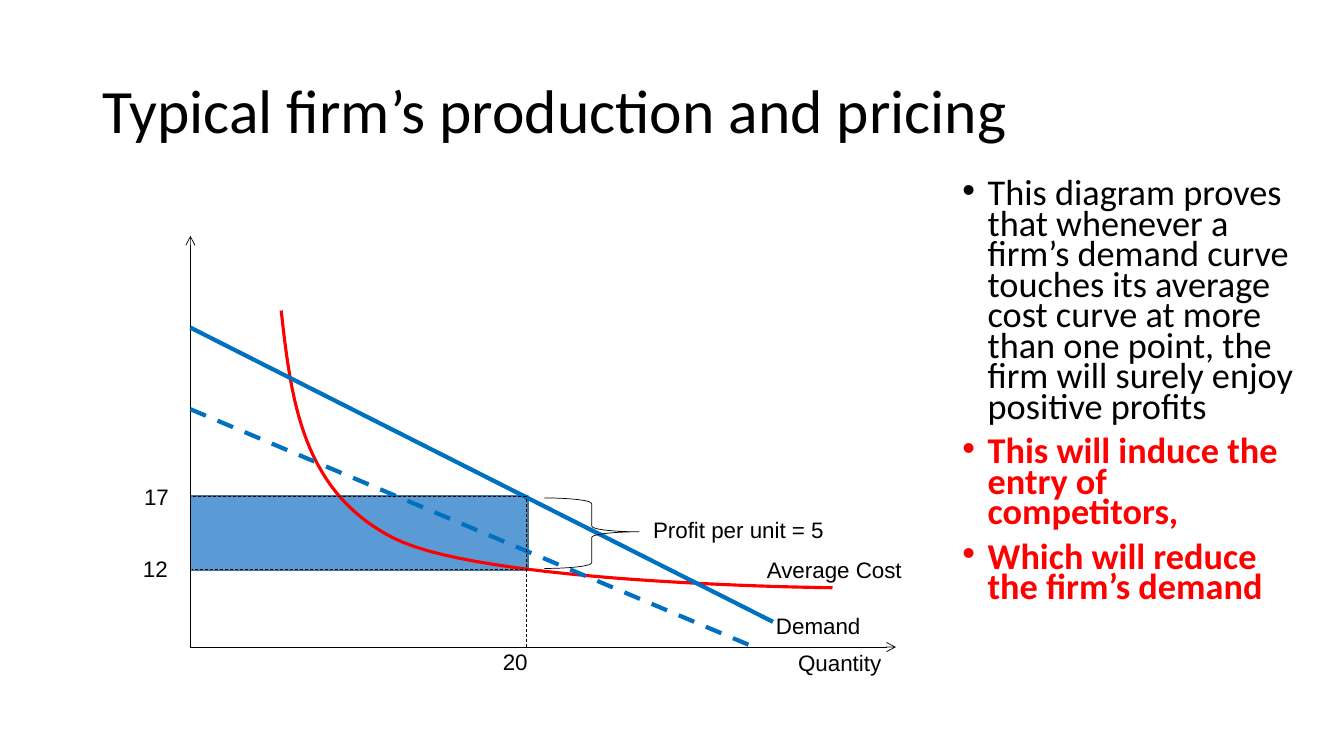
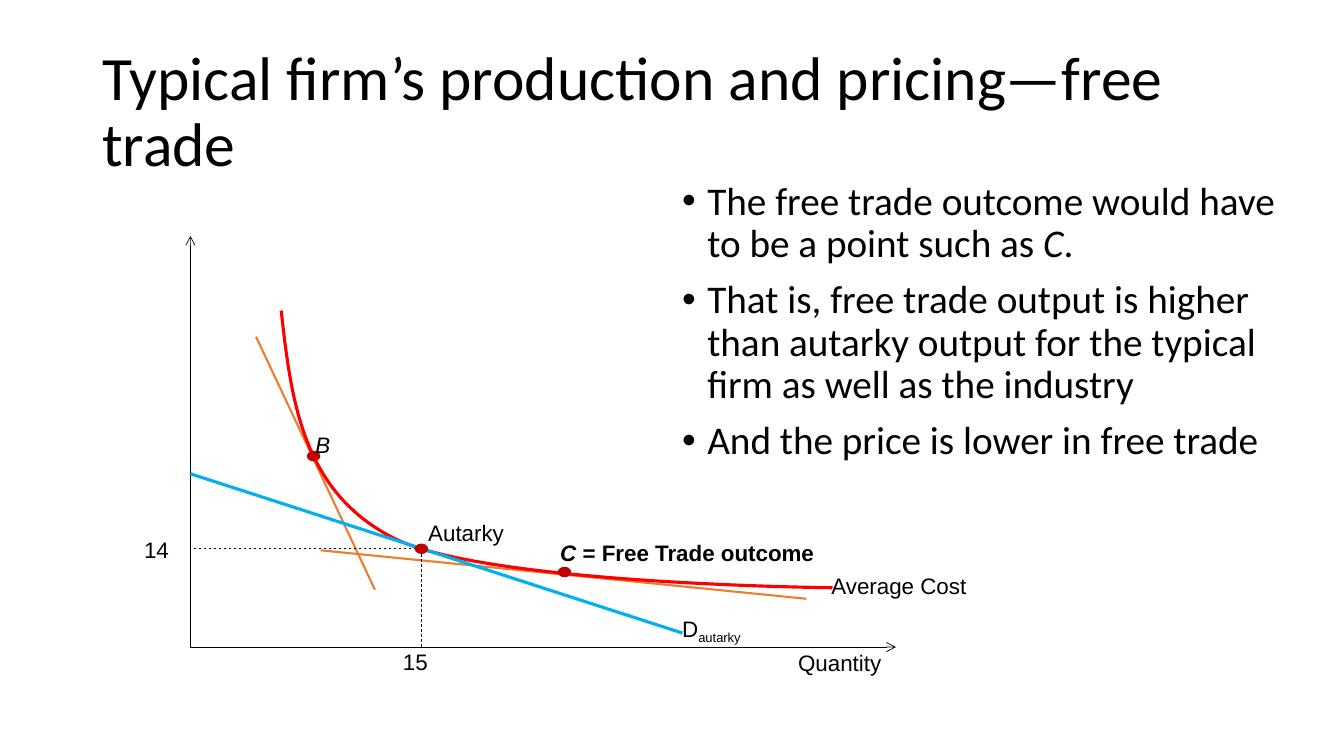
from lxml.etree import SubElement
from pptx import Presentation
from pptx.dml.color import RGBColor
from pptx.enum.dml import MSO_LINE
from pptx.enum.shapes import MSO_CONNECTOR, MSO_SHAPE
from pptx.enum.text import MSO_ANCHOR
from pptx.oxml.ns import qn
from pptx.util import Pt

BLACK, RED, BLUE, SKY = "000000", "FF0000", "0070C0", "00B0F0"
ORANGE, DOT_RED, PROFIT_FILL, PROFIT_EDGE = "ED7D31", "C00000", "5B9BD5", "43739E"
TITLE_FONT, LABEL_FONT = "Calibri", "Arial"
BOLD, ITALIC, SUBSCRIPT = "bold", "italic", "subscript"

ORIGIN_X, ORIGIN_Y = 136, 462.2
PRICE_TOP, QUANTITY_END = 168.5, 640
COST_START = (200.9, 221.8)
COST_BEZIERS = [
    ((208.1, 286.6), (216, 351.4), (281.5, 384.5)),
    ((347, 417.6), (594.7, 419.8), (594.7, 419.8)),
]
CURVE_STEPS = 30
DOT_WIDTH, DOT_HEIGHT = 8.6, 6.5
QUANTITY_LABEL = ([("Quantity",)], 563, 460.1, 112)

PROFIT_SLIDE = {
    "title": "Typical firm’s production and pricing",
    "body": {
        "box": (680.4, 126, 250.6, 356.4), "size": 25.9, "spacing": 0.7,
        "points": [
            (BLACK, [("This diagram proves that whenever a firm’s demand curve touches its "
                      "average cost curve at more than one point, the firm will surely "
                      "enjoy positive profits",)]),
            (RED, [("This will induce the entry of competitors,", BOLD)]),
            (RED, [("Which will reduce the firm’s demand", BOLD)]),
        ],
    },
    "profit": (136, 354.2, 241.2, 53.3),
    "brace": (388.8, 355.7, 67.7, 50.4),
    "tangents": [],
    "demands": [
        ((136, 234), (552.2, 444.2), BLUE, 3, False),
        ((136, 292.3), (542.2, 463.7), BLUE, 3, True),
    ],
    "guides": [
        ((375.8, ORIGIN_Y), (375.8, 354.2)),
        ((375.8, 354.2), (136, 354.2)),
        ((377.3, 406.8), (137.5, 406.8)),
    ],
    "dots": [],
    "labels": [
        ([("Demand",)], 547.2, 433.4, 112),
        ([("Average Cost",)], 540.7, 393.8, 160),
        QUANTITY_LABEL,
        ([("20",)], 352.1, 459.4, 50),
        ([("17",)], 95.8, 341.3, 50),
        ([("12",)], 95, 393.1, 50),
        ([("Profit per unit = 5",)], 459.4, 365, 196),
    ],
}

TRADE_SLIDE = {
    "title": "Typical firm’s production and pricing—free trade",
    "body": {
        "box": (480.2, 126, 451.4, 211.7), "size": 28, "spacing": 0.9,
        "points": [
            (BLACK, [("The free trade outcome would have to be a point such as ",),
                     ("C", ITALIC), (".",)]),
            (BLACK, [("That is, free trade output is higher than autarky output for the "
                      "typical firm as well as the industry",)]),
            (BLACK, [("And the price is lower in free trade",)]),
        ],
    },
    "tangents": [
        ((182.9, 240.5), (267.8, 421.2), ORANGE, 1.5, False),
        ((229, 393.1), (576, 427.7), ORANGE, 1.5, False),
    ],
    "demands": [((136, 338.4), (487.4, 452.2), SKY, 2.25, False)],
    "guides": [
        ((301, 392), (301, ORIGIN_Y)),
        ((301, 392), (136, 392)),
    ],
    "dots": [(301, 392), (224, 325.8), (403.2, 408.6)],
    "labels": [
        ([("Average Cost",)], 586.8, 405.4, 160),
        QUANTITY_LABEL,
        ([("15",)], 280.8, 459.4, 50),
        ([("14",)], 95.8, 379.4, 50),
        ([("D",), ("autarky", SUBSCRIPT)], 480.2, 435.6, 108),
        ([("Autarky",)], 298.8, 367.2, 95),
        ([("C ", BOLD, ITALIC), ("= Free Trade outcome", BOLD)], 393.1, 381.6, 274),
        ([("B", ITALIC)], 218.2, 304.6, 45),
    ],
}


def colour(value):
    """Turn a hex string into a colour."""
    return RGBColor.from_string(value)


def set_line(line, hue, width):
    """Give an outline its colour and width."""
    line.color.rgb = colour(hue)
    line.width = Pt(width)


def add_runs(paragraph, pieces, font, size, hue):
    """Write styled pieces of text into a paragraph."""
    for words, *styles in pieces:
        run = paragraph.add_run()
        run.text = words
        run.font.name = font
        run.font.size = Pt(size)
        run.font.color.rgb = colour(hue)
        run.font.bold = BOLD in styles
        run.font.italic = ITALIC in styles
        if SUBSCRIPT in styles:
            run.font._element.set("baseline", "-25000")


def add_frame(slide, left, top, width, height):
    """Add a wrapping text box and return its text frame."""
    frame = slide.shapes.add_textbox(Pt(left), Pt(top), Pt(width), Pt(height)).text_frame
    frame.word_wrap = True
    return frame


def add_title(slide, title):
    """Add the slide title."""
    frame = add_frame(slide, 66, 28.8, 828, 104.4)
    frame.vertical_anchor = MSO_ANCHOR.MIDDLE
    frame.paragraphs[0].line_spacing = 0.9
    add_runs(frame.paragraphs[0], [(title,)], TITLE_FONT, 44, BLACK)


def add_body(slide, body):
    """Add the bulleted commentary."""
    frame = add_frame(slide, *body["box"])
    for index, (hue, pieces) in enumerate(body["points"]):
        paragraph = frame.add_paragraph() if index else frame.paragraphs[0]
        paragraph.line_spacing = body["spacing"]
        paragraph.space_before = Pt(10)
        properties = paragraph._p.get_or_add_pPr()
        properties.set("marL", str(Pt(18)))
        properties.set("indent", str(-Pt(18)))
        SubElement(properties, qn("a:buFont")).set("typeface", "Arial")
        SubElement(properties, qn("a:buChar")).set("char", "•")
        add_runs(paragraph, pieces, TITLE_FONT, body["size"], hue)


def add_segment(slide, start, end, hue, width, dashed=False, arrow=False):
    """Draw a straight line, dashed or arrowed on request."""
    ends = [Pt(value) for value in (*start, *end)]
    segment = slide.shapes.add_connector(MSO_CONNECTOR.STRAIGHT, *ends)
    set_line(segment.line, hue, width)
    if dashed:
        segment.line.dash_style = MSO_LINE.DASH
    if arrow:
        SubElement(segment.line._get_or_add_ln(), qn("a:tailEnd")).set("type", "arrow")
    SubElement(segment._element.spPr, qn("a:effectLst"))


def add_preset(slide, kind, box, fill, hue, width):
    """Add a preset shape without a shadow."""
    shape = slide.shapes.add_shape(kind, *[Pt(value) for value in box])
    shape.shadow.inherit = False
    if fill:
        shape.fill.solid()
        shape.fill.fore_color.rgb = colour(fill)
    else:
        shape.fill.background()
    set_line(shape.line, hue, width)
    return shape


def cost_points():
    """List points along the average cost curve."""
    points, start = [], COST_START
    for first, second, end in COST_BEZIERS:
        for step in range(1, CURVE_STEPS + 1):
            t = step / CURVE_STEPS
            u = 1 - t
            points.append(tuple(
                Pt(u**3 * a + 3 * u * u * t * b + 3 * u * t * t * c + t**3 * d)
                for a, b, c, d in zip(start, first, second, end)))
        start = end
    return points


def add_cost_curve(slide):
    """Draw the average cost curve."""
    builder = slide.shapes.build_freeform(*[Pt(value) for value in COST_START])
    builder.add_line_segments(cost_points(), close=False)
    curve = builder.convert_to_shape()
    curve.shadow.inherit = False
    curve.fill.background()
    set_line(curve.line, RED, 2.25)


def add_diagram(slide, content):
    """Draw axes, curves, guides, dots and labels."""
    for tangent in content["tangents"]:
        add_segment(slide, *tangent)
    for axis_end in ((ORIGIN_X, PRICE_TOP), (QUANTITY_END, ORIGIN_Y)):
        add_segment(slide, (ORIGIN_X, ORIGIN_Y), axis_end, BLACK, 0.5, arrow=True)
    add_cost_curve(slide)
    for demand in content["demands"]:
        add_segment(slide, *demand)
    for start, end in content["guides"]:
        add_segment(slide, start, end, BLACK, 0.5, dashed=True)
    for x, y in content["dots"]:
        box = (x - DOT_WIDTH / 2, y - DOT_HEIGHT / 2, DOT_WIDTH, DOT_HEIGHT)
        add_preset(slide, MSO_SHAPE.OVAL, box, DOT_RED, DOT_RED, 1)
    if "brace" in content:
        brace = add_preset(slide, MSO_SHAPE.RIGHT_BRACE, content["brace"], None, BLACK, 0.5)
        brace.adjustments[0] = 0.08
        brace.adjustments[1] = 0.48
    for pieces, left, top, width in content["labels"]:
        frame = add_frame(slide, left, top, width, 26.6)
        add_runs(frame.paragraphs[0], pieces, LABEL_FONT, 16, BLACK)


def main():
    """Build and save the presentation."""
    deck = Presentation()
    deck.slide_width, deck.slide_height = Pt(960), Pt(540)
    for content in (PROFIT_SLIDE, TRADE_SLIDE):
        slide = deck.slides.add_slide(deck.slide_layouts[6])
        if "profit" in content:
            add_preset(slide, MSO_SHAPE.RECTANGLE, content["profit"],
                       PROFIT_FILL, PROFIT_EDGE, 1)
        add_title(slide, content["title"])
        add_body(slide, content["body"])
        add_diagram(slide, content)
    deck.save("out.pptx")


if __name__ == "__main__":
    main()
